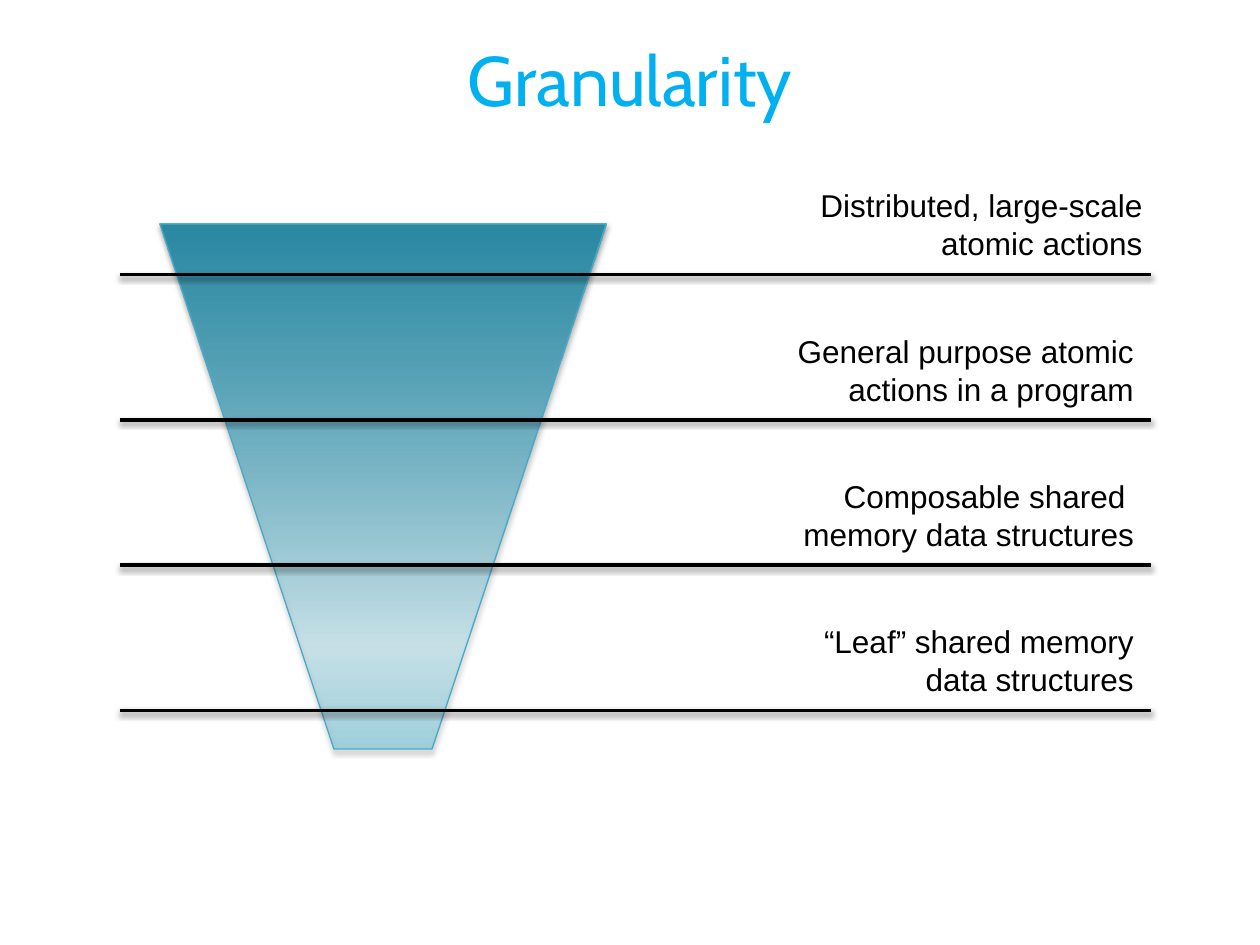
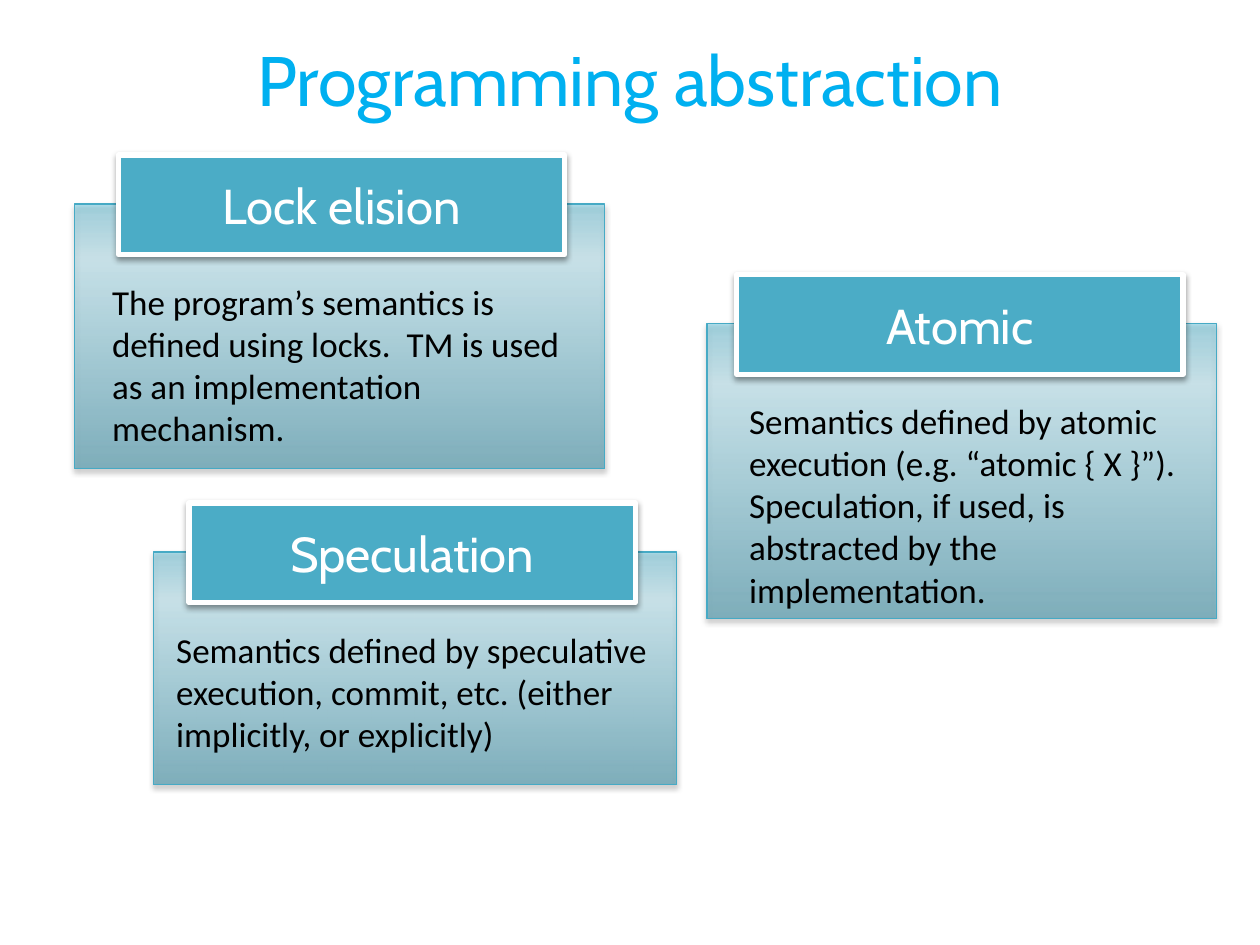
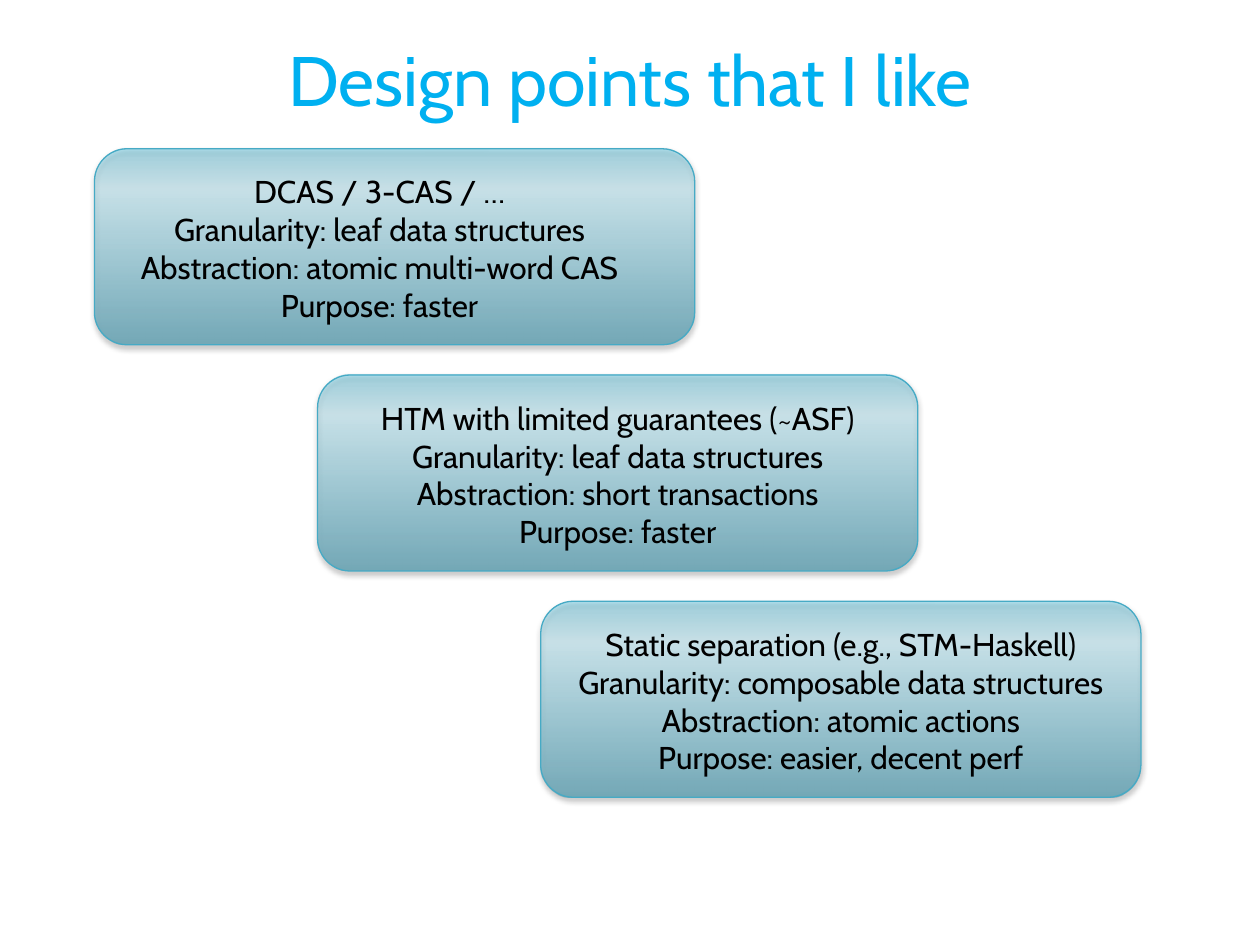
from dataclasses import dataclass
from typing import Any

from pptx import Presentation
from pptx.dml.color import RGBColor
from pptx.enum.shapes import MSO_CONNECTOR, MSO_SHAPE
from pptx.enum.text import MSO_ANCHOR, MSO_AUTO_SIZE, PP_ALIGN
from pptx.oxml import parse_xml
from pptx.oxml.ns import nsdecls, qn
from pptx.util import Pt


@dataclass(frozen=True)
class Theme:
    title_color: str = "00B0F0"
    text_color: str = "000000"
    white: str = "FFFFFF"
    header_fill: str = "4BACC6"
    outline: str = "46AAC5"
    gradient_dark: str = "2A88A2"
    gradient_middle: str = "37B1D2"
    gradient_light: str = "34B4D6"
    heading_font: str = "Cabin"
    body_font: str = "Calibri"
    label_font: str = "Arial"
    title_size: float = 40
    header_size: float = 28
    body_size: float = 20
    label_size: float = 18


THEME = Theme()


@dataclass(frozen=True)
class Box:
    left: float
    top: float
    width: float
    height: float

    def lengths(self) -> tuple[Pt, Pt, Pt, Pt]:
        return Pt(self.left), Pt(self.top), Pt(self.width), Pt(self.height)


@dataclass(frozen=True)
class Level:
    text: str
    left: float
    width: float
    wrap: bool = False


@dataclass(frozen=True)
class Panel:
    heading: str
    body: str
    box: Box
    header_left: float
    text_left: float
    text_width: float
    text_height: float


@dataclass(frozen=True)
class DesignPoint:
    heading: str
    details: str
    text_shift: float = 0


LEVELS = [
    Level("Distributed, large-scale\natomic actions", 460, 200),
    Level("General purpose atomic\nactions in a program", 441.5, 213.5),
    Level("Composable shared \nmemory data structures", 320.4, 334.8, True),
    Level("“Leaf” shared memory\ndata structures", 457, 198),
]

PANELS = [
    Panel(
        "Lock elision",
        "The program’s semantics is defined using locks.  TM is used as an "
        "implementation mechanism.",
        Box(42.5, 116.6, 303, 151), 67.7, 57, 285, 104.5,
    ),
    Panel(
        "Speculation",
        "Semantics defined by speculative\nexecution, commit, etc. (either \n"
        "implicitly, or explicitly)",
        Box(87.8, 315.4, 299, 133), 108, 93.6, 306, 80,
    ),
    Panel(
        "Atomic",
        "Semantics defined by atomic execution (e.g. “atomic { X }”).  "
        "Speculation, if used, is abstracted by the implementation.",
        Box(404, 185, 291, 168.5), 421, 421, 268, 128,
    ),
]

DESIGN_POINTS = [
    DesignPoint(
        "DCAS / 3-CAS / …",
        "Granularity: leaf data structures\nAbstraction: atomic multi-word CAS\n"
        "Purpose: faster",
        -8.6,
    ),
    DesignPoint(
        "HTM with limited guarantees (~ASF)",
        "Granularity: leaf data structures\nAbstraction: short transactions\n"
        "Purpose: faster",
    ),
    DesignPoint(
        "Static separation (e.g., STM-Haskell)",
        "Granularity: composable data structures\nAbstraction: atomic actions\n"
        "Purpose: easier, decent perf",
    ),
]


def write_text(shape: Any, *texts: str, font: str, size: float,
               color: str = THEME.text_color, align: PP_ALIGN = PP_ALIGN.LEFT,
               anchor: MSO_ANCHOR = MSO_ANCHOR.TOP, wrap: bool = True,
               grow: bool = False) -> None:
    frame = shape.text_frame
    frame.word_wrap = wrap
    frame.vertical_anchor = anchor
    frame.auto_size = MSO_AUTO_SIZE.SHAPE_TO_FIT_TEXT if grow else MSO_AUTO_SIZE.NONE
    for index, text in enumerate(texts):
        paragraph = frame.add_paragraph() if index else frame.paragraphs[0]
        paragraph.text = text
        paragraph.alignment = align
        for run in paragraph.runs:
            run.font.name = font
            run.font.size = Pt(size)
            run.font.color.rgb = RGBColor.from_string(color)


def add_text(shapes: Any, box: Box, *texts: str, **text_format: Any) -> None:
    write_text(shapes.add_textbox(*box.lengths()), *texts, **text_format)


def add_shadow(shape: Any, opacity: int, distance: float) -> None:
    shape._element.spPr.append(parse_xml(
        f'<a:effectLst {nsdecls("a")}><a:outerShdw blurRad="{Pt(3.15)}" '
        f'dist="{Pt(distance)}" dir="5400000" rotWithShape="0">'
        f'<a:srgbClr val="000000"><a:alpha val="{opacity * 1000}"/></a:srgbClr>'
        f'</a:outerShdw></a:effectLst>'))


def set_line(shape: Any, color: str, width: float) -> None:
    shape.line.color.rgb = RGBColor.from_string(color)
    shape.line.width = Pt(width)


def add_gradient_shape(shapes: Any, kind: MSO_SHAPE, box: Box, dark_opacity: int) -> Any:
    shape = shapes.add_shape(kind, *box.lengths())
    shape.fill.gradient()
    shape.fill.gradient_angle = 90
    stops = shape._element.spPr.find(qn("a:gradFill")).find(qn("a:gsLst"))
    for stop in list(stops):
        stops.remove(stop)
    for position, color, opacity in (
        (0, THEME.gradient_dark, dark_opacity),
        (80, THEME.gradient_middle, 20),
        (100, THEME.gradient_light, 37),
    ):
        stops.append(parse_xml(
            f'<a:gs {nsdecls("a")} pos="{position * 1000}"><a:srgbClr val="{color}">'
            f'<a:alpha val="{opacity * 1000}"/></a:srgbClr></a:gs>'))
    set_line(shape, THEME.outline, 0.75)
    add_shadow(shape, 35, 1.8)
    return shape


def add_titled_slide(presentation: Any, title: str) -> Any:
    slide = presentation.slides.add_slide(presentation.slide_layouts[6])
    add_text(slide.shapes, Box(0, 0, 720, 90), title, font=THEME.heading_font,
             size=THEME.title_size, color=THEME.title_color,
             align=PP_ALIGN.CENTER, anchor=MSO_ANCHOR.MIDDLE)
    return slide


def add_level(shapes: Any, level: Level, line_top: float) -> None:
    line = shapes.add_connector(MSO_CONNECTOR.STRAIGHT, Pt(68.5), Pt(line_top),
                                Pt(658), Pt(line_top))
    set_line(line, THEME.text_color, 2)
    add_shadow(line, 38, 1.6)
    add_text(shapes, Box(level.left, line_top - 54, level.width, 51), level.text,
             font=THEME.label_font, size=THEME.label_size, align=PP_ALIGN.RIGHT,
             wrap=level.wrap, grow=True)


def add_panel(shapes: Any, panel: Panel) -> None:
    add_gradient_shape(shapes, MSO_SHAPE.RECTANGLE, panel.box, 50)
    header_box = Box(panel.header_left, panel.box.top - 28, 255, 57)
    header = shapes.add_shape(MSO_SHAPE.RECTANGLE, *header_box.lengths())
    header.fill.solid()
    header.fill.fore_color.rgb = RGBColor.from_string(THEME.header_fill)
    set_line(header, THEME.white, 3)
    add_shadow(header, 38, 1.6)
    write_text(header, panel.heading, font=THEME.heading_font, size=THEME.header_size,
               color=THEME.white, align=PP_ALIGN.CENTER, anchor=MSO_ANCHOR.MIDDLE)
    add_text(shapes, Box(panel.text_left, panel.box.top + 40, panel.text_width,
                         panel.text_height),
             panel.body, font=THEME.body_font, size=THEME.body_size, grow=True)


def add_design_point(shapes: Any, point: DesignPoint, left: float, top: float) -> None:
    add_gradient_shape(shapes, MSO_SHAPE.ROUNDED_RECTANGLE, Box(left, top, 343, 112), 55)
    add_text(shapes, Box(left + point.text_shift, top + 10, 343, 84),
             point.heading, point.details, font=THEME.heading_font,
             size=THEME.label_size, align=PP_ALIGN.CENTER, grow=True)


def build_granularity(presentation: Any) -> None:
    slide = add_titled_slide(presentation, "Granularity")
    funnel = add_gradient_shape(slide.shapes, MSO_SHAPE.TRAPEZOID,
                                Box(91.4, 128, 255, 300), 100)
    funnel.adjustments[0] = 0.39
    funnel._element.spPr.find(qn("a:xfrm")).set("flipV", "1")
    for index, level in enumerate(LEVELS):
        add_level(slide.shapes.add_group_shape().shapes, level, 157 + 83 * index)


def build_abstraction(presentation: Any) -> None:
    slide = add_titled_slide(presentation, "Programming abstraction")
    for panel in PANELS:
        add_panel(slide.shapes.add_group_shape().shapes, panel)


def build_design_points(presentation: Any) -> None:
    slide = add_titled_slide(presentation, "Design points that I like")
    for index, point in enumerate(DESIGN_POINTS):
        add_design_point(slide.shapes.add_group_shape().shapes, point,
                         54 + 127.5 * index, 85 + 129.3 * index)


def main() -> None:
    presentation = Presentation()
    presentation.slide_width = Pt(720)
    presentation.slide_height = Pt(540)
    build_granularity(presentation)
    build_abstraction(presentation)
    build_design_points(presentation)
    presentation.save("out.pptx")


if __name__ == "__main__":
    main()
